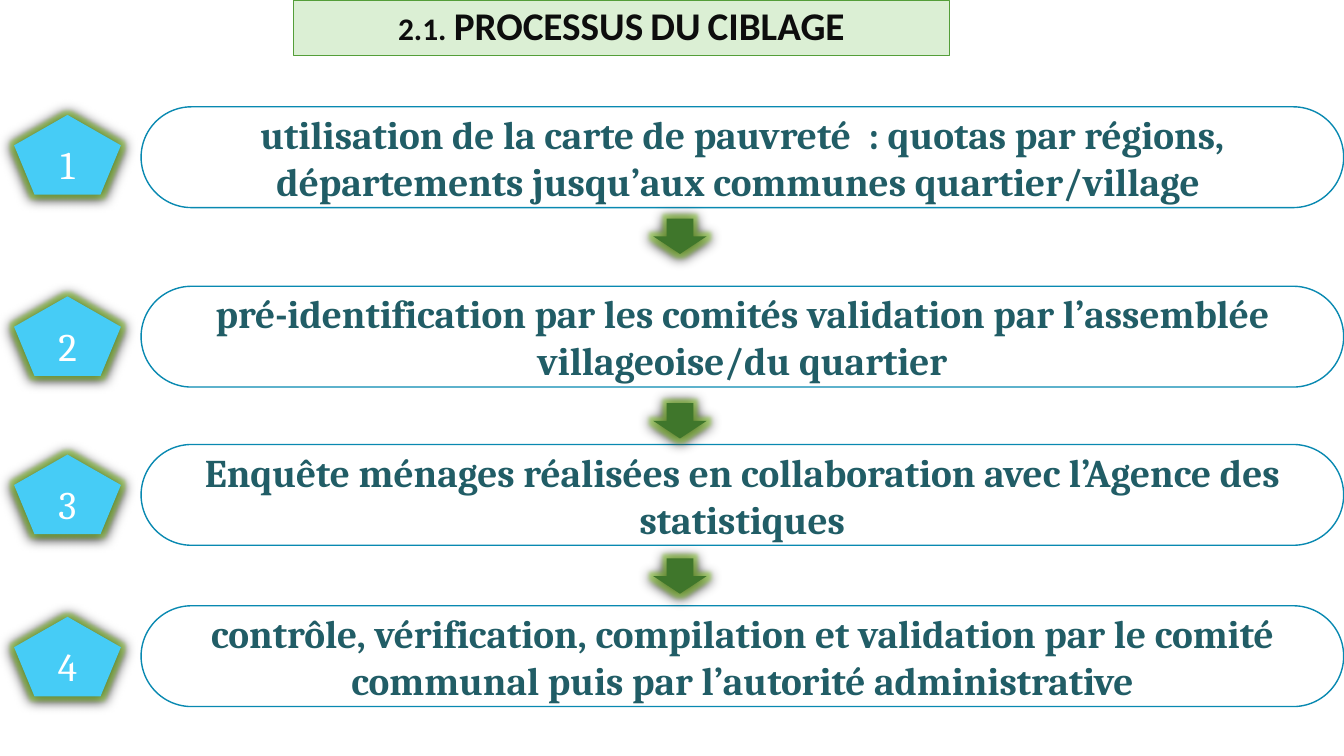
from dataclasses import dataclass
from typing import NamedTuple

from lxml.etree import SubElement
from pptx import Presentation
from pptx.dml.color import RGBColor
from pptx.enum.shapes import MSO_SHAPE
from pptx.enum.text import MSO_ANCHOR, MSO_AUTO_SIZE, PP_ALIGN
from pptx.oxml import parse_xml
from pptx.oxml.ns import nsdecls, qn
from pptx.util import Pt


@dataclass(frozen=True)
class Theme:
    white: str = "FFFFFF"
    ink: str = "0D0D0D"
    mint: str = "DBEFD4"
    leaf: str = "549E39"
    sky: str = "46CCF6"
    blue: str = "0989B1"
    teal: str = "215D66"
    moss: str = "3F762B"
    glow: str = "8FCB3E"
    black: str = "000000"
    size: float = 28
    head: str = "Calibri"
    body: str = "Cambria"


class Box(NamedTuple):
    left: float
    top: float
    width: float
    height: float


class Step(NamedTuple):
    top: float
    badge: float
    text: str


THEME = Theme()
STEPS = (
    Step(76.3, 82.1, "utilisation de la carte de pauvreté  : quotas par régions, "
         "départements jusqu’aux communes quartier/village "),
    Step(204.5, 211.7, "pré-identification par les comités validation par "
         "l’assemblée villageoise/du quartier"),
    Step(317.5, 324.7, "Enquête ménages réalisées en collaboration avec "
         "l’Agence des statistiques"),
    Step(432.7, 440.6, "contrôle, vérification, compilation et validation par le "
         "comité communal puis par l’autorité administrative"),
)
ARROWS = (156.2, 288, 398.9)


def place(shape, box: Box) -> None:
    for name, value in box._asdict().items():
        setattr(shape, name, Pt(value))


def paint(shape, fill: str, line: str = "", weight: float = 1) -> None:
    shape.fill.solid()
    shape.fill.fore_color.rgb = RGBColor.from_string(fill)
    if line:
        shape.line.color.rgb = RGBColor.from_string(line)
        shape.line.width = Pt(weight)
    else:
        shape.line.fill.background()


def write(shape, text: str, face: str, color: str, bold: bool = False) -> None:
    frame = shape.text_frame
    frame.text = text
    form = {"word_wrap": True, "auto_size": MSO_AUTO_SIZE.NONE,
            "vertical_anchor": MSO_ANCHOR.MIDDLE}
    for name, value in form.items():
        setattr(frame, name, value)
    line = frame.paragraphs[0]
    line.alignment = PP_ALIGN.CENTER
    font = line.runs[0].font
    for name, value in {"name": face, "size": Pt(THEME.size), "bold": bold}.items():
        setattr(font, name, value)
    font.color.rgb = RGBColor.from_string(color)


def add(slide, kind: MSO_SHAPE, box: Box):
    shape = slide.shapes.add_shape(kind, *map(Pt, box))
    shape.shadow.inherit = False
    return shape


def shine(shape) -> None:
    """Give the shape a green glow over a soft dark shadow."""
    props = shape._element.spPr
    props.remove(props.find(qn("a:effectLst")))
    props.append(parse_xml(
        f'<a:effectLst {nsdecls("a")}>'
        f'<a:glow rad="{Pt(5.5)}"><a:srgbClr val="{THEME.glow}">'
        '<a:alpha val="60000"/></a:srgbClr></a:glow>'
        f'<a:outerShdw blurRad="{Pt(8.5)}" dist="{Pt(1)}" dir="5400000" '
        f'rotWithShape="0"><a:srgbClr val="{THEME.black}"/></a:outerShdw>'
        '</a:effectLst>'))


def add_head(slide) -> None:
    title = slide.shapes.title
    place(title, Box(209.5, 0, 468.7, 39.6))
    geom = SubElement(title._element.spPr, qn("a:prstGeom"), prst="roundRect")
    guides = SubElement(geom, qn("a:avLst"))
    SubElement(guides, qn("a:gd"), name="adj", fmla="val 50000")
    paint(title, THEME.mint, THEME.leaf, 0.5)
    write(title, "2.1. PROCESSUS DU CIBLAGE", THEME.head, THEME.ink, True)
    line = title.text_frame.paragraphs[0]
    line.line_spacing = 0.9
    line.runs[0].font._element.set("cap", "small")


def add_step(slide, rank: int, step: Step) -> None:
    badge = add(slide, MSO_SHAPE.REGULAR_PENTAGON, Box(10.1, step.badge, 76.3, 56.9))
    paint(badge, THEME.sky)
    shine(badge)
    write(badge, str(rank), THEME.body, THEME.white)
    pill = add(slide, MSO_SHAPE.ROUNDED_RECTANGLE, Box(100.8, step.top, 859, 72))
    pill.adjustments[0] = 0.5
    paint(pill, THEME.white, THEME.blue)
    write(pill, step.text, THEME.body, THEME.teal, True)


def add_arrow(slide, top: float) -> None:
    arrow = add(slide, MSO_SHAPE.DOWN_ARROW, Box(466.6, top, 38.2, 25.2))
    paint(arrow, THEME.moss)
    shine(arrow)


def main() -> None:
    deck = Presentation()
    deck.slide_width, deck.slide_height = Pt(960), Pt(540)
    slide = deck.slides.add_slide(deck.slide_layouts.get_by_name("Title Only"))
    add_head(slide)
    for rank, step in enumerate(STEPS, 1):
        add_step(slide, rank, step)
    for top in ARROWS:
        add_arrow(slide, top)
    deck.save("out.pptx")


if __name__ == "__main__":
    main()
